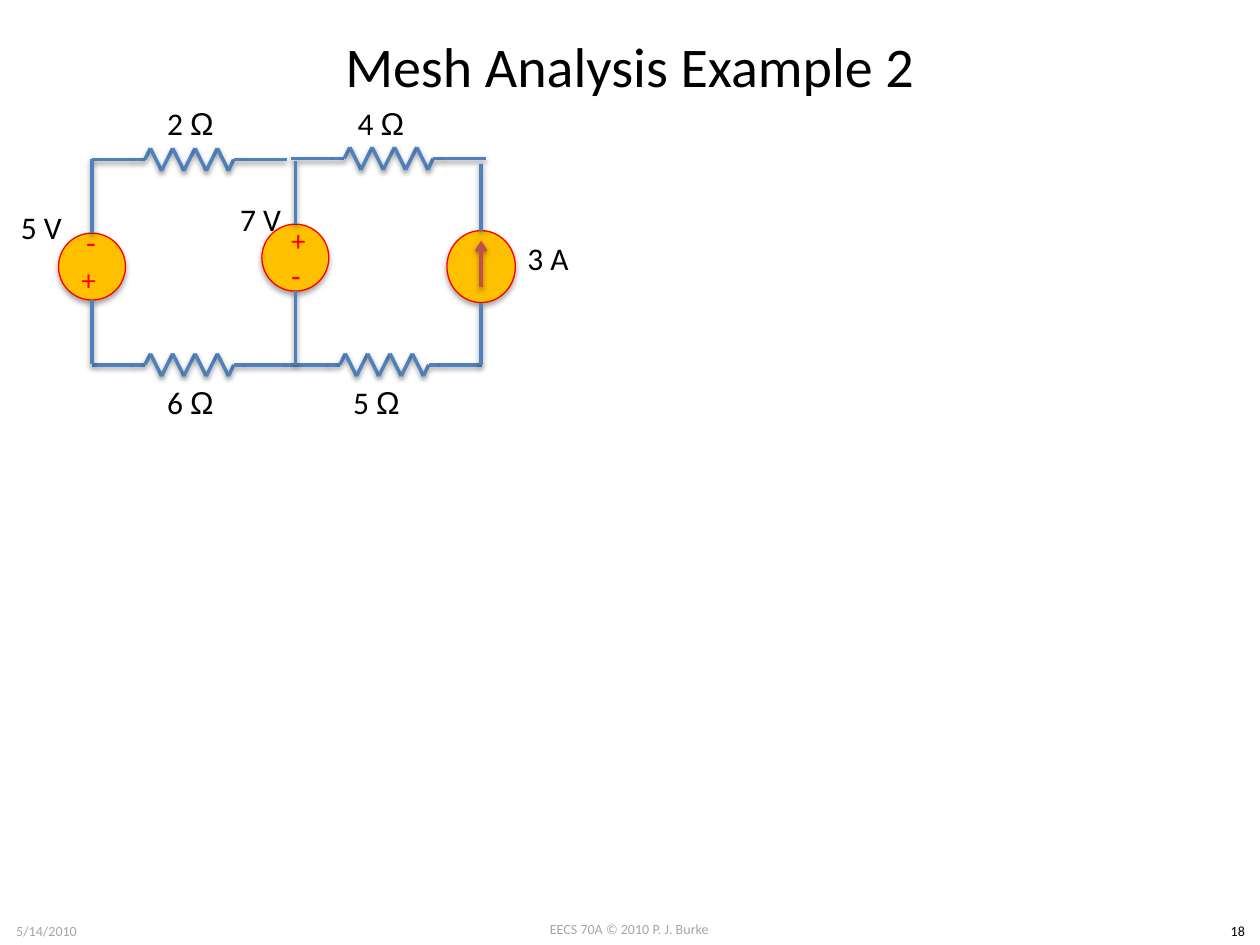
from dataclasses import dataclass
from itertools import pairwise
from typing import NamedTuple

from lxml.etree import SubElement
from pptx import Presentation
from pptx.dml.color import RGBColor
from pptx.enum.shapes import MSO_CONNECTOR, MSO_SHAPE
from pptx.enum.text import MSO_ANCHOR, MSO_AUTO_SIZE, PP_ALIGN
from pptx.oxml.ns import qn
from pptx.util import Cm, Pt


@dataclass(frozen=True)
class Theme:
    font: str = "Calibri"
    symbol_font: str = "Arial"
    ink: str = "000000"
    muted: str = "A6A6A6"
    wire: str = "4F81BD"
    current: str = "C0504D"
    source_fill: str = "FFC000"
    source_line: str = "FF0000"
    title_size: float = 32
    label_size: float = 18
    plus_size: float = 16.6
    footer_size: float = 8
    wire_width: float = 2
    outline_width: float = 0.75


THEME = Theme()


class Box(NamedTuple):
    left: float
    top: float
    width: float
    height: float

    def within(self, left, top, width, height):
        return Box(self.left + left, self.top + top, width, height)

    def lengths(self):
        return [Cm(value) for value in self]


def add_text(shapes, box, text, *, symbol="", size=THEME.label_size, color=THEME.ink,
             align=PP_ALIGN.LEFT, anchor=MSO_ANCHOR.TOP, wrap=True, grow=False, rotation=0):
    shape = shapes.add_textbox(*box.lengths())
    shape.rotation = rotation
    frame = shape.text_frame
    frame.word_wrap = wrap
    frame.auto_size = MSO_AUTO_SIZE.SHAPE_TO_FIT_TEXT if grow else MSO_AUTO_SIZE.NONE
    frame.vertical_anchor = anchor
    para = frame.paragraphs[0]
    para.alignment = align
    for content, font in ((text, THEME.font), (symbol, THEME.symbol_font)):
        if content:
            span = para.add_run()
            span.text = content
            span.font.name = font
            span.font.size = Pt(size)
            span.font.color.rgb = RGBColor.from_string(color)


def add_shadow(shape, distance, opacity):
    effects = SubElement(shape.element.spPr, qn("a:effectLst"))
    shadow = SubElement(effects, qn("a:outerShdw"), blurRad=str(Pt(3.1)),
                        dist=str(Pt(distance)), dir="5400000", rotWithShape="0")
    color = SubElement(shadow, qn("a:srgbClr"), val=THEME.ink)
    SubElement(color, qn("a:alpha"), val=str(opacity * 1000))


def add_wire(shapes, start, end, color=THEME.wire, arrow=False):
    ends = [Cm(value) for value in (*start, *end)]
    wire = shapes.add_connector(MSO_CONNECTOR.STRAIGHT, *ends)
    wire.line.color.rgb = RGBColor.from_string(color)
    wire.line.width = Pt(THEME.wire_width)
    if arrow:
        SubElement(wire.line._get_or_add_ln() if not hasattr(wire, "get_or_add_ln")
                   else wire.get_or_add_ln(), qn("a:tailEnd"), type="arrow")
    add_shadow(wire, 1.6, 38)


def add_resistor(page, box):
    lead, flat, pitch = 0.85, 0.22, 0.225
    first_peak = lead + flat + pitch / 2
    middle = box.height / 2
    points = [(0, middle), (lead, middle), (lead + flat, middle)]
    points += [(first_peak + pitch * i, box.height * (i % 2)) for i in range(8)]
    points += [(box.width - x, middle) for x in (lead + flat, lead, 0)]
    group = page.shapes.add_group_shape()
    for start, end in pairwise((box.left + x, box.top + y) for x, y in points):
        add_wire(group.shapes, start, end)


def add_source(page, box, lead, circle_height):
    group = page.shapes.add_group_shape()
    circle_box = box.within(0, lead, box.width, circle_height)
    circle = group.shapes.add_shape(MSO_SHAPE.OVAL, *circle_box.lengths())
    circle.fill.solid()
    circle.fill.fore_color.rgb = RGBColor.from_string(THEME.source_fill)
    circle.line.color.rgb = RGBColor.from_string(THEME.source_line)
    circle.line.width = Pt(THEME.outline_width)
    add_shadow(circle, 1.8, 35)
    axis = box.left + box.width / 2
    add_wire(group.shapes, (axis, box.top), (axis, circle_box.top))
    add_wire(group.shapes, (axis, circle_box.top + circle_height), (axis, box.top + box.height))
    return group, circle_box


def add_voltage_source(page, box, lead, signs, rotation=0):
    group, circle = add_source(page, box, lead, box.width)
    for sign, top in zip(signs, (-0.1, 0.61)):
        add_text(group.shapes, circle.within(0.34, top, 0.66, 0.84), sign,
                 size=THEME.plus_size if sign == "+" else THEME.label_size,
                 color=THEME.source_line, align=PP_ALIGN.CENTER,
                 anchor=MSO_ANCHOR.MIDDLE, rotation=rotation)


def add_current_source(page, box, lead, circle_height):
    group, circle = add_source(page, box, lead, circle_height)
    axis = circle.left + circle.width / 2
    add_wire(group.shapes, (axis, circle.top + 1.14), (axis, circle.top + 0.2),
             color=THEME.current, arrow=True)


def add_circuit(page, box):
    bottom = box.height
    resistors = (
        ("2 ", 0, 0, 1.27, -1.24),
        ("6 ", 0, bottom, 1.27, 0.23),
        ("5 ", 3.93, bottom, 1.09, 0.23),
        ("4 ", 4.02, -0.02, 1.09, -1.22),
    )
    for value, left, level, label_left, label_top in resistors:
        add_resistor(page, box.within(left, level - 0.23, 3.93, 0.45))
        add_text(page.shapes, box.within(left + label_left, level + label_top, 1.47, 1.02),
                 value, symbol="Ω", wrap=False, grow=True)

    add_voltage_source(page, box.within(3.43, 0.03, 1.35, 4.11), 1.27, "+-")
    add_current_source(page, box.within(7.16, 0.08, 1.38, 4.06), 1.35, 1.45)
    add_voltage_source(page, box.within(-0.67, -0.02, 1.35, 4.14), 1.5, "-+", rotation=180)
    for text, left, top in (("7 V", 2.74, 0.69), ("3 A", 8.53, 1.47), ("5 V", -1.68, 0.84)):
        add_text(page.shapes, box.within(left, top, 1.35, 1.02), text, wrap=False, grow=True)


def add_title(page, box):
    add_text(page.shapes, box, "Mesh Analysis Example 2", size=THEME.title_size,
             align=PP_ALIGN.CENTER, anchor=MSO_ANCHOR.MIDDLE)


def add_footer(page, box):
    parts = (
        ("EECS 70A © 2010 P. J. Burke", 9.73, 0, 5.92, THEME.muted),
        ("5/14/2010", 0, 0.03, 1.88, THEME.muted),
        ("18", 24.51, 0.03, 0.89, THEME.ink),
    )
    for text, left, top, width, color in parts:
        add_text(page.shapes, box.within(left, top, width, box.height), text,
                 size=THEME.footer_size, color=color, align=PP_ALIGN.CENTER, grow=True)


def main():
    deck = Presentation()
    deck.slide_width, deck.slide_height = Cm(25.4), Cm(19.05)
    page = deck.slides.add_slide(deck.slide_layouts[6])
    add_footer(page, Box(0, 18.44, 25.4, 0.61))
    add_title(page, Box(1.27, -0.28, 22.86, 3.18))
    add_circuit(page, Box(1.85, 3.22, 7.85, 4.14))
    deck.save("out.pptx")


if __name__ == "__main__":
    main()
